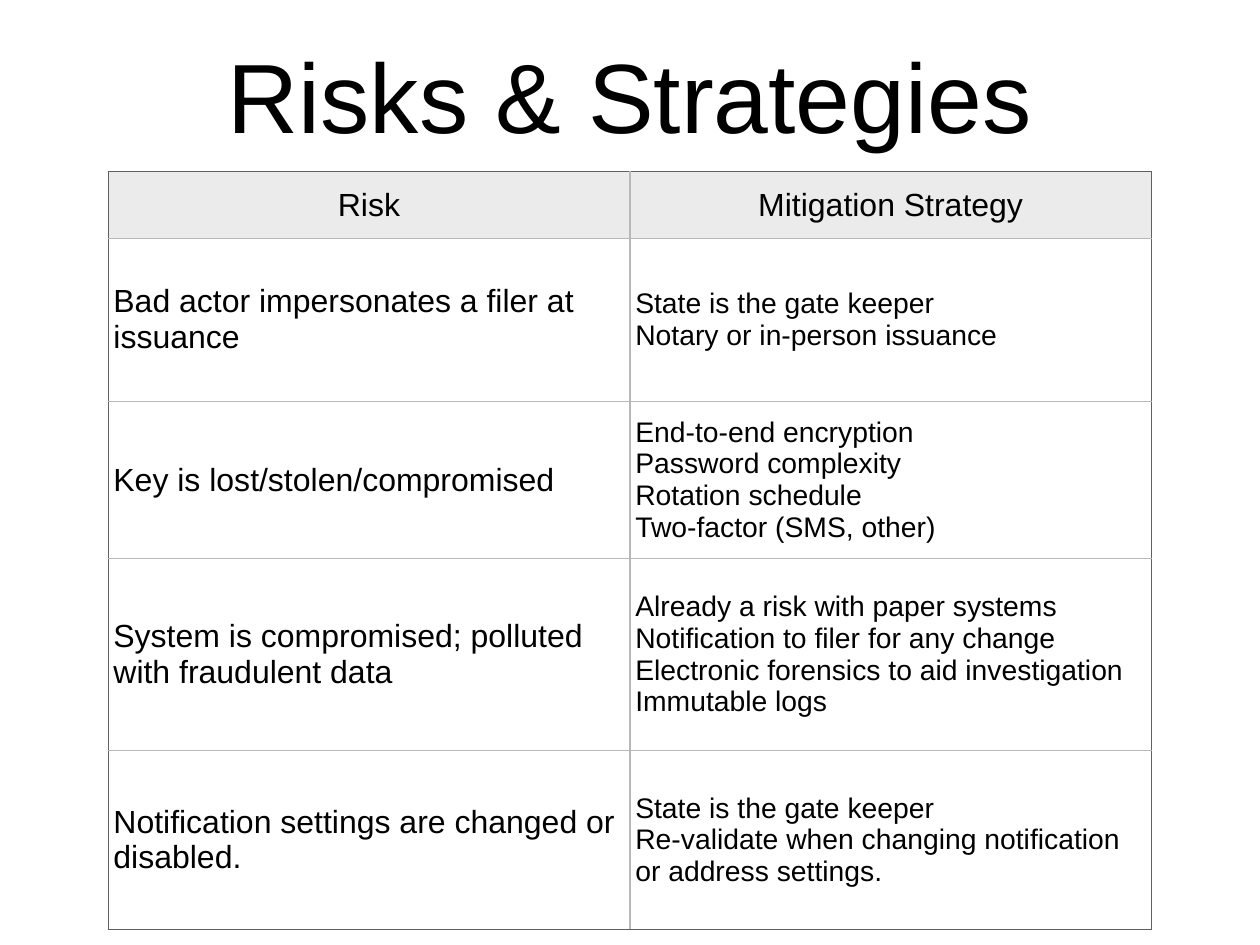
from pptx import Presentation
from pptx import util as u
from pptx.dml.color import RGBColor
from pptx.enum import text
from pptx.oxml.ns import qn
from lxml import etree

TITLE = "Risks & Strategies"
HEADS = ("Risk", "Mitigation Strategy")
RISKS = [
    ("Bad actor impersonates a filer at issuance",
     ["State is the gate keeper", "Notary or in-person issuance"]),
    ("Key is lost/stolen/compromised",
     ["End-to-end encryption", "Password complexity",
      "Rotation schedule", "Two-factor (SMS, other)"]),
    ("System is compromised; polluted with fraudulent data",
     ["Already a risk with paper systems",
      "Notification to filer for any change",
      "Electronic forensics to aid investigation", "Immutable logs"]),
    ("Notification settings are changed or disabled.",
     ["State is the gate keeper",
      "Re-validate when changing notification or address settings."]),
]
WIDE, HIGH = 14.22, 10.67
LEFT, TOP, COL = 1.22, 1.94, 5.89
ROWS = (0.75, 1.84, 1.78, 2.16, 2.03)
PAD = u.Inches(0.06)
FONT, INK, OUTER, INNER = "Arial", "000000", "606060", "B8B8B8"
HEAD, BODY = "EBEBEB", "FFFFFF"


def color(code):
    return RGBColor.from_string(code)


def write(frame, lines, size, align):
    """Put lines in one paragraph, parted by line breaks."""
    para = frame.paragraphs[0]
    para.alignment = align
    for i, line in enumerate(lines):
        if i:
            para.add_line_break()
        run = para.add_run()
        run.text = line
        run.font.name = FONT
        run.font.size = u.Pt(size)
        run.font.color.rgb = color(INK)


def pad(box):
    box.margin_left = box.margin_right = PAD
    box.margin_top = box.margin_bottom = PAD
    box.vertical_anchor = text.MSO_ANCHOR.MIDDLE


def edge(cell, side, code):
    line = etree.SubElement(cell._tc.get_or_add_tcPr(), qn("a:ln" + side),
                            w=str(u.Pt(1)))
    fill = etree.SubElement(line, qn("a:solidFill"))
    etree.SubElement(fill, qn("a:srgbClr"), val=code)


def main():
    deck = Presentation()
    deck.slide_width, deck.slide_height = u.Inches(WIDE), u.Inches(HIGH)
    slide = deck.slides.add_slide(deck.slide_layouts[6])
    mid, left = text.PP_ALIGN.CENTER, text.PP_ALIGN.LEFT

    box = slide.shapes.add_textbox(*map(u.Inches, (1.39, 0.31, 11.44, 1.51)))
    frame = box.text_frame
    frame.word_wrap = True
    pad(frame)
    write(frame, [TITLE], 80, mid)

    grid = [[[head] for head in HEADS]]
    grid += [[[risk], plan] for risk, plan in RISKS]
    last, end = len(grid) - 1, len(HEADS) - 1
    area = (LEFT, TOP, COL * len(HEADS), sum(ROWS))
    table = slide.shapes.add_table(len(grid), len(HEADS),
                                   *map(u.Inches, area)).table
    for col in table.columns:
        col.width = u.Inches(COL)
    for row, tall in zip(table.rows, ROWS):
        row.height = u.Inches(tall)

    for r, row in enumerate(grid):
        for c, lines in enumerate(row):
            cell = table.cell(r, c)
            pad(cell)
            size = 23 if r and c else 26
            write(cell.text_frame, lines, size, left if r else mid)
            rims = {"L": c == 0, "R": c == end, "T": r == 0, "B": r == last}
            for side, rim in rims.items():
                edge(cell, side, OUTER if rim else INNER)
            cell.fill.solid()
            cell.fill.fore_color.rgb = color(BODY if r else HEAD)
    deck.save("out.pptx")


if __name__ == "__main__":
    main()
